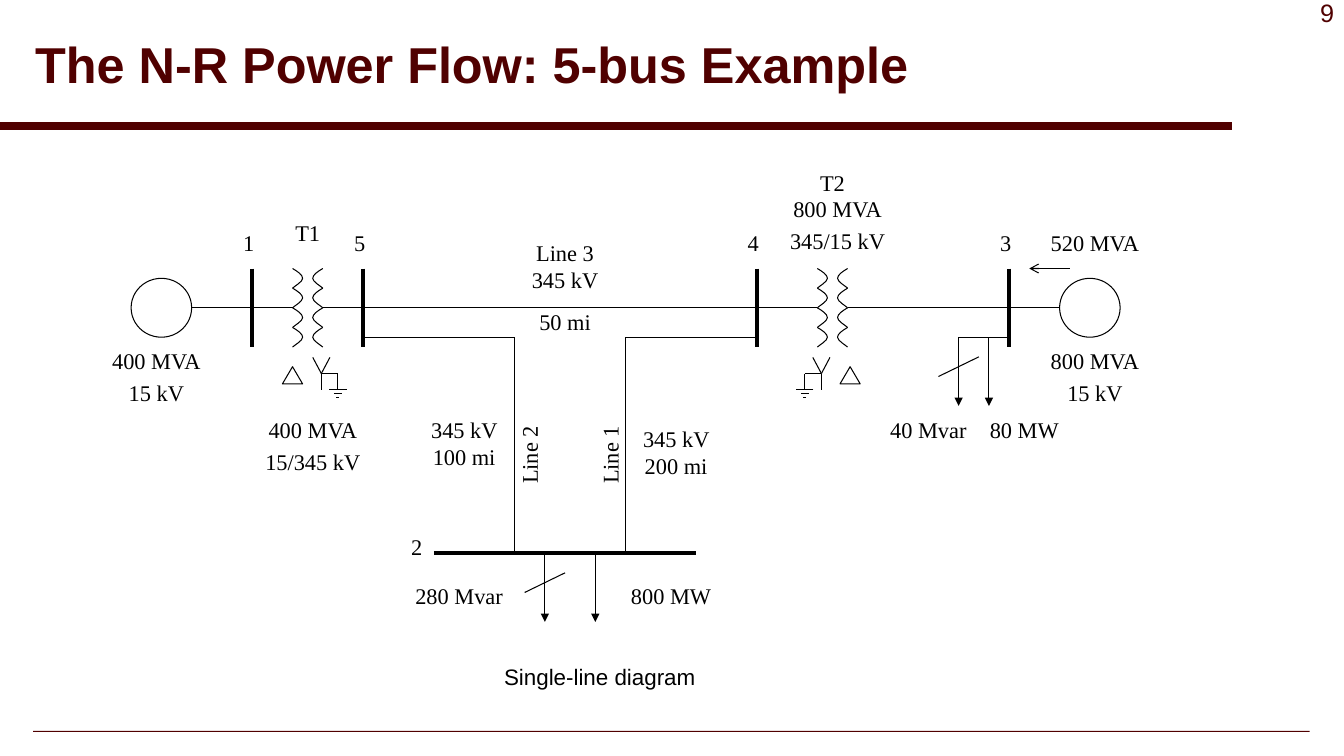
import dataclasses

import lxml.etree
import pptx
import pptx.dml.color
import pptx.enum.shapes
import pptx.enum.text
import pptx.oxml.ns
import pptx.util

Inches = pptx.util.Inches
SHAPE = pptx.enum.shapes.MSO_SHAPE
ALIGN = pptx.enum.text.PP_ALIGN
ANCHOR = pptx.enum.text.MSO_ANCHOR
qn = pptx.oxml.ns.qn


@dataclasses.dataclass(frozen=True)
class Theme:
    """Colours, fonts, type sizes and line weights."""
    maroon: str = "500000"
    ink: str = "000000"
    sans: str = "Arial"
    serif: str = "Times New Roman"
    title: int = 36
    number: int = 18
    label: int = 16
    gap: float = 3.7
    wire: float = 0.75
    bus: float = 3
    rule: float = 6


THEME = Theme()


@dataclasses.dataclass(frozen=True)
class Grid:
    """A box on a slide divided into columns and rows."""
    s: object
    left: float
    top: float
    width: float
    height: float
    cols: float
    rows: float

    def x(self, col):
        """Return the horizontal place of a column."""
        return Inches(self.left + col * self.width / self.cols)

    def y(self, row):
        """Return the vertical place of a row."""
        return Inches(self.top + row * self.height / self.rows)

    def box(self, col, row, cols, rows):
        """Return left, top, width and height of a block of cells."""
        left, top = self.x(col), self.y(row)
        return left, top, self.x(col + cols) - left, self.y(row + rows) - top


def rgb(value):
    """Return a colour object."""
    return pptx.dml.color.RGBColor.from_string(value)


def outline(shape):
    """Give a shape a thin line and no fill."""
    shape.shadow.inherit = False
    shape.fill.background()
    shape.line.color.rgb = rgb(THEME.ink)
    shape.line.width = pptx.util.Pt(THEME.wire)


def wire(g, c1, r1, c2, r2, weight=THEME.wire, color=THEME.ink, head=None):
    """Draw a straight line between two grid points."""
    line = g.s.shapes.add_connector(
        pptx.enum.shapes.MSO_CONNECTOR.STRAIGHT, g.x(c1), g.y(r1), g.x(c2), g.y(r2))
    line.line.color.rgb = rgb(color)
    line.line.width = pptx.util.Pt(weight)
    if head:
        ln = line.line._get_or_add_ln()
        lxml.etree.SubElement(ln, qn("a:tailEnd"), type=head)
    lxml.etree.SubElement(line._element.spPr, qn("a:effectLst"))


def text(s, box, lines, font=THEME.serif, size=THEME.label, color=THEME.ink,
         bold=False, align=ALIGN.CENTER, anchor=ANCHOR.TOP, inset=(0, 0), spacing=None):
    """Place a text box with one paragraph per line."""
    tb = s.shapes.add_textbox(*box)
    tf = tb.text_frame
    tf.word_wrap = True
    tf.vertical_anchor = anchor
    tf.margin_left = tf.margin_right = Inches(inset[0])
    tf.margin_top = tf.margin_bottom = Inches(inset[1])
    for i, line in enumerate(lines):
        p = tf.add_paragraph() if i else tf.paragraphs[0]
        p.alignment = align
        if i:
            p.space_before = pptx.util.Pt(THEME.gap)
        if spacing:
            p.line_spacing = spacing
        r = p.add_run()
        r.text = line
        r.font.name = font
        r.font.size = pptx.util.Pt(size)
        r.font.bold = bold
        r.font.color.rgb = rgb(color)
    return tb


def coil(g, col, row, side):
    """Draw one curved turn of a winding that bulges to the given side."""
    points = [(g.x(col + side * dx), g.y(row + dy)) for dx, dy in (
        (0, 0), (0.5, 0.3), (1, 0.65), (1, 1), (1, 1.35), (0.2, 1.8), (0, 2))]
    fb = g.s.shapes.build_freeform(*points[0])
    fb.add_line_segments(points[1:], close=False)
    turn = fb.convert_to_shape()
    segments = list(turn._element.iter(qn("a:lnTo")))
    for start in (0, 3):
        curve = lxml.etree.Element(qn("a:cubicBezTo"))
        segments[start].addprevious(curve)
        for segment in segments[start:start + 3]:
            curve.append(segment[0])
            segment.getparent().remove(segment)
    outline(turn)


def transformer(g, col, axis, side):
    """Draw two windings with delta and grounded wye symbols below."""
    for row in range(10, 18, 2):
        coil(g, col, row, 1)
        coil(g, col + 3, row, -1)
    outline(g.s.shapes.add_shape(
        SHAPE.ISOSCELES_TRIANGLE, *g.box(axis - 1.5 * side - 1, 20, 2, 1.75)))
    wye, ground = 1.35, 3
    for c1, r1, c2, r2 in (
            (wye - 0.85, 19.05, wye, 20.7), (wye, 20.7, wye + 0.85, 19.05),
            (wye, 20.7, wye, 22.35), (wye, 20.7, ground, 20.7),
            (ground, 20.7, ground, 22.35)):
        wire(g, axis + side * c1, r1, axis + side * c2, r2)
    for half, row in ((0.85, 22.35), (0.4, 22.7), (0.15, 23.1)):
        wire(g, axis + side * (ground - half), row, axis + side * (ground + half), row)


def network(g):
    """Draw generators, buses, lines and loads."""
    for col in (3, 95):
        outline(g.s.shapes.add_shape(SHAPE.OVAL, *g.box(col, 11, 6, 6)))
    for c1, c2 in ((9, 15), (15, 19), (22, 26), (26, 66), (66, 71), (74, 90), (90, 95)):
        wire(g, c1, 14, c2, 14)
    for bus, drop in ((26, 41), (65, 52)):
        wire(g, bus, 17, drop, 17)
        wire(g, drop, 17, drop, 39)
    wire(g, 85, 17, 90, 17)
    for col, row in ((85, 17), (88, 17), (44, 39), (49, 39)):
        wire(g, col, row, col, row + 7, head="triangle")
    for col, row in ((83, 21), (42, 43)):
        wire(g, col, row, col + 4, row - 2)
    wire(g, 96, 10, 92, 10, head="arrow")
    transformer(g, 19, 20.5, 1)
    transformer(g, 71, 72.75, -1)
    for col in (15, 26, 65, 90):
        wire(g, col, 10, col, 18, THEME.bus)
    wire(g, 33, 39, 59, 39, THEME.bus)


def labels(g):
    """Write the ratings and names around the network."""
    for col, row, cols, lines in (
            (0, 18, 11, ("400 MVA", "15 kV")),
            (15, 25, 12, ("400 MVA", "15/345 kV")),
            (19, 5, 3, ("T1",)), (71, -0.15, 3, ("T2",)),
            (67, 2.55, 12, ("800 MVA", "345/15 kV")),
            (93, 18, 11, ("800 MVA", "15 kV")),
            (93, 6, 11, ("520 MVA",)),
            (87, 25, 9, ("80 MW",)), (77, 25, 10, ("40 Mvar",)),
            (30, 42, 11, ("280 Mvar",)), (51, 42, 11, ("800 MW",)),
            (42, 7, 8, ("Line 3 345 kV",)), (42, 14, 8, ("50 mi",)),
            (32, 25, 8, ("345 kV 100 mi",)), (53, 26, 8, ("345 kV 200 mi",)),
            (14, 6, 1.3, ("1",)), (25, 6, 1.3, ("5",)), (64, 6, 1.3, ("4",)),
            (89, 6, 1.3, ("3",)), (30.65, 37, 1.3, ("2",))):
        height = 3.2 * max(len(lines), 2 if cols == 8 and len(lines[0]) > 5 else 1)
        text(g.s, g.box(col, row, cols, height), lines)
    for col, name in ((38.75, "Line 2"), (46.75, "Line 1")):
        text(g.s, g.box(col, 27.4, 7.8, 3.2), (name,)).rotation = 270


def frame(g, title, number, caption):
    """Place the title, rules, page number and caption."""
    foot = g.s.shapes.add_shape(SHAPE.RECTANGLE, *g.box(0.33, 7.25, 12.66, 0.01))
    foot.shadow.inherit = False
    foot.fill.solid()
    foot.fill.fore_color.rgb = rgb(THEME.maroon)
    foot.line.fill.background()
    wire(g, 0, 1.25, 12.22, 1.25, THEME.rule, THEME.maroon)
    text(g.s, g.box(12.13, -0.08, 1.2, 0.4), (number,), THEME.sans, THEME.number,
         THEME.maroon, align=ALIGN.RIGHT, inset=(0.1, 0.05))
    text(g.s, g.box(0.25, 0.08, 11.92, 1.17), (title,), THEME.sans, THEME.title,
         THEME.maroon, True, ALIGN.LEFT, ANCHOR.MIDDLE, (0.1, 0.05), 0.9)
    text(g.s, g.box(5, 6.58, 1.95, 0.27), (caption,), THEME.sans, align=ALIGN.LEFT)


def main():
    """Build and save the slide."""
    prs = pptx.Presentation()
    prs.slide_width, prs.slide_height = Inches(13.33), Inches(7.5)
    s = prs.slides.add_slide(prs.slide_layouts[6])
    frame(Grid(s, 0, 0, 13.33, 7.5, 13.33, 7.5),
          "The N-R Power Flow: 5-bus Example", "9", "Single-line diagram")
    diagram = Grid(s, 1, 1.69, 10.41, 4.48, 104, 46)
    network(diagram)
    labels(diagram)
    prs.save("out.pptx")


if __name__ == "__main__":
    main()
